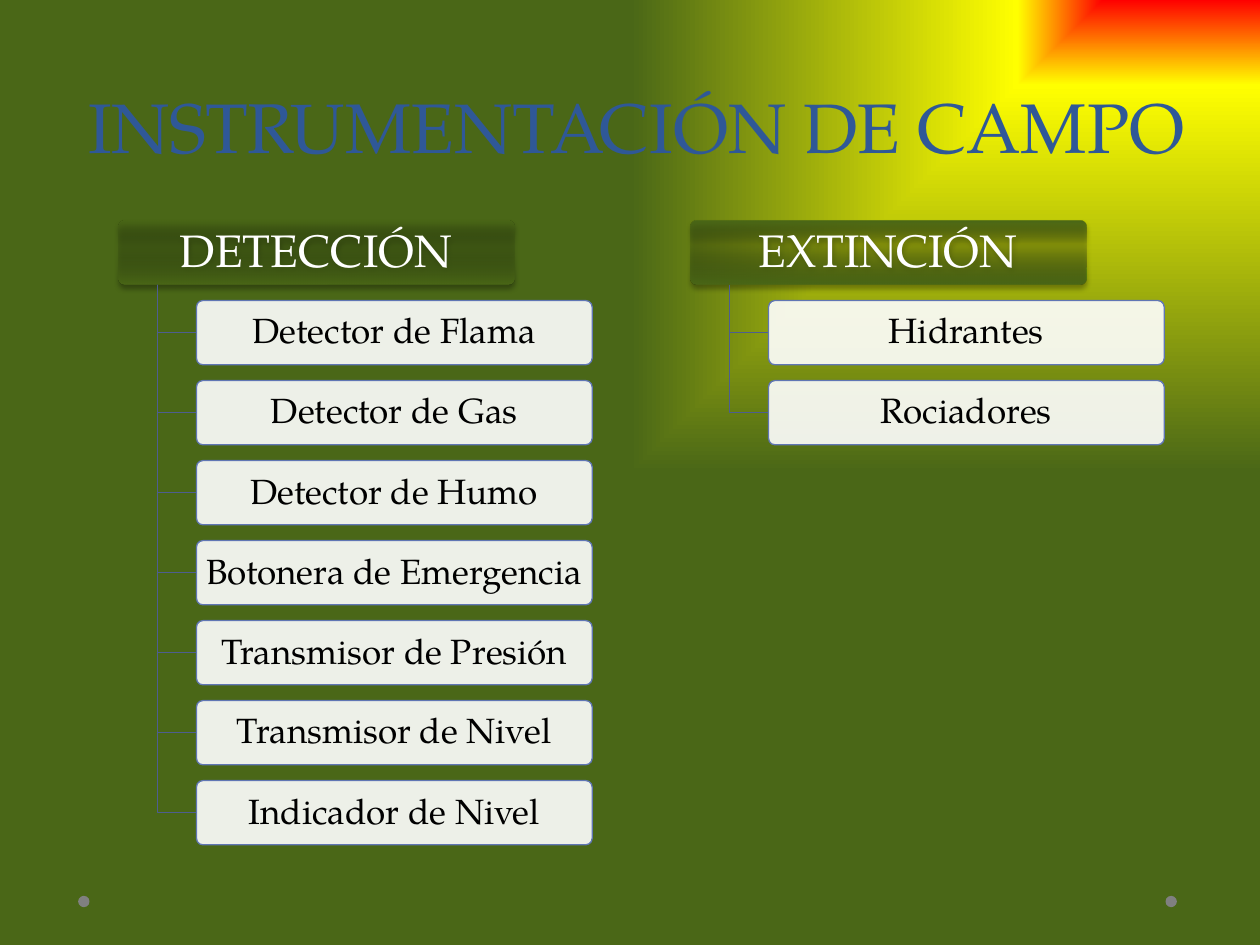
from lxml import etree
from pptx import Presentation
from pptx import util as u
from pptx.dml.color import RGBColor
from pptx.enum import shapes, text
from pptx.oxml import ns

FONT = "TeX Gyre Pagella"
RED = RGBColor(0xFF, 0x00, 0x00)
YELLOW = RGBColor(0xFF, 0xFF, 0x00)
OLIVE = RGBColor(0x4A, 0x67, 0x17)
DARK_OLIVE = RGBColor(0x31, 0x44, 0x10)
BLUE = RGBColor(0x2F, 0x58, 0x97)
BORDER = RGBColor(0x60, 0x76, 0xB4)
CONNECTOR = RGBColor(0x4D, 0x5E, 0x90)
GRAY = RGBColor(0x80, 0x80, 0x80)
WHITE = RGBColor(0xFF, 0xFF, 0xFF)
BLACK = RGBColor(0x00, 0x00, 0x00)

TOP = 1.75
PITCH = 0.635
BOX_WIDTH, BOX_HEIGHT = 3.14, 0.51
STEM = 0.31
COLUMNS = [
    (0.94, "DETECCIÓN", [
        "Detector de Flama", "Detector de Gas", "Detector de Humo",
        "Botonera de Emergencia", "Transmisor de Presión",
        "Transmisor de Nivel", "Indicador de Nivel"]),
    (5.48, "EXTINCIÓN", ["Hidrantes", "Rociadores"]),
]


def add_element(parent, tag, **attributes):
    element = etree.SubElement(parent, ns.qn(tag))
    for name, value in attributes.items():
        element.set(name, str(value))
    return element


def add_color(parent, color, opacity=100):
    element = add_element(parent, "a:srgbClr", val=color)
    if opacity < 100:
        add_element(element, "a:alpha", val=opacity * 1000)


def replace_fill(parent, stops):
    solid = parent.find(ns.qn("a:solidFill"))
    gradient = etree.Element(ns.qn("a:gradFill"), rotWithShape="1")
    parent.replace(solid, gradient)
    stop_list = add_element(gradient, "a:gsLst")
    for position, color, opacity in stops:
        stop = add_element(stop_list, "a:gs", pos=position * 1000)
        add_color(stop, color, opacity)
    return gradient


def paint_background(slide):
    slide.background.fill.solid()
    properties = slide.element.cSld.find(ns.qn("p:bg")).find(ns.qn("p:bgPr"))
    gradient = replace_fill(
        properties, [(0, RED, 100), (18, YELLOW, 100), (100, OLIVE, 100)])
    focus = add_element(gradient, "a:path", path="rect")
    add_element(focus, "a:fillToRect", l=100000, b=100000)


def format_text(shape, content, size, color, alignment):
    frame = shape.text_frame
    frame.text = content
    frame.word_wrap = True
    frame.auto_size = text.MSO_AUTO_SIZE.NONE
    paragraph = frame.paragraphs[0]
    paragraph.alignment = alignment
    font = paragraph.runs[0].font
    font.name, font.size = FONT, u.Pt(size)
    font.color.rgb = color
    return frame, paragraph


def add_title(slide, content):
    title = slide.shapes.title
    title.left, title.top = u.Inches(0.5), u.Inches(0.64)
    title.width, title.height = u.Inches(9), u.Inches(0.74)
    frame, paragraph = format_text(title, content, 40, BLUE, text.PP_ALIGN.RIGHT)
    frame.vertical_anchor = text.MSO_ANCHOR.BOTTOM
    paragraph.line_spacing = u.Pt(58)


def add_solid(slide, kind, left, top, width, height, color):
    shape = slide.shapes.add_shape(
        kind, *(u.Inches(length) for length in (left, top, width, height)))
    shape.shadow.inherit = False
    shape.fill.solid()
    shape.fill.fore_color.rgb = color
    shape.line.fill.background()
    return shape


def add_box(slide, left, top, content, size, color):
    box = add_solid(slide, shapes.MSO_SHAPE.ROUNDED_RECTANGLE,
                    left, top, BOX_WIDTH, BOX_HEIGHT, WHITE)
    box.adjustments[0] = 0.1
    frame, paragraph = format_text(box, content, size, color, text.PP_ALIGN.CENTER)
    frame.vertical_anchor = text.MSO_ANCHOR.MIDDLE
    frame.margin_left = frame.margin_right = u.Inches(0.05)
    frame.margin_top = frame.margin_bottom = u.Inches(0.05)
    paragraph.line_spacing = 0.9
    return box


def add_header(slide, left, content):
    properties = add_box(slide, left, TOP, content, 26, WHITE).element.spPr
    gradient = replace_fill(
        properties, [(0, OLIVE, 100), (63, DARK_OLIVE, 26), (100, OLIVE, 100)])
    add_element(gradient, "a:lin", ang=270 * 60000, scaled=0)
    effects = properties.find(ns.qn("a:effectLst"))
    shadow = add_element(effects, "a:outerShdw", blurRad=u.Pt(3.1),
                         dist=u.Pt(1.8), dir=90 * 60000, rotWithShape=0)
    add_color(shadow, BLACK, 35)


def add_item(slide, left, top, content):
    box = add_box(slide, left, top, content, 20, BLACK)
    add_color_opacity = box.element.spPr.find(ns.qn("a:solidFill"))[0]
    add_element(add_color_opacity, "a:alpha", val=90000)
    box.line.color.rgb = BORDER
    box.line.width = u.Pt(0.75)


def add_elbow(slide, left, top, bottom):
    x, y, end = u.Inches(left), u.Inches(top), u.Inches(bottom)
    builder = slide.shapes.build_freeform(x, y)
    builder.add_line_segments([(x, end), (x + u.Inches(STEM), end)], close=False)
    elbow = builder.convert_to_shape()
    elbow.shadow.inherit = False
    elbow.fill.background()
    elbow.line.color.rgb = CONNECTOR
    elbow.line.width = u.Pt(0.75)


def add_column(slide, left, heading, items):
    add_header(slide, left, heading)
    for row, item in enumerate(items, 1):
        top = TOP + row * PITCH
        add_elbow(slide, left + STEM, TOP + BOX_HEIGHT, top + BOX_HEIGHT / 2)
        add_item(slide, left + 2 * STEM, top, item)


def main():
    presentation = Presentation()
    presentation.slide_width, presentation.slide_height = u.Inches(10), u.Inches(7.5)
    slide = presentation.slides.add_slide(presentation.slide_layouts[5])
    paint_background(slide)
    for left in (9.25, 0.62):
        add_solid(slide, shapes.MSO_SHAPE.OVAL, left, 7.11, 0.09, 0.09, GRAY)
    add_title(slide, "INSTRUMENTACIÓN DE CAMPO")
    for left, heading, items in COLUMNS:
        add_column(slide, left, heading, items)
    presentation.save("out.pptx")


if __name__ == "__main__":
    main()
